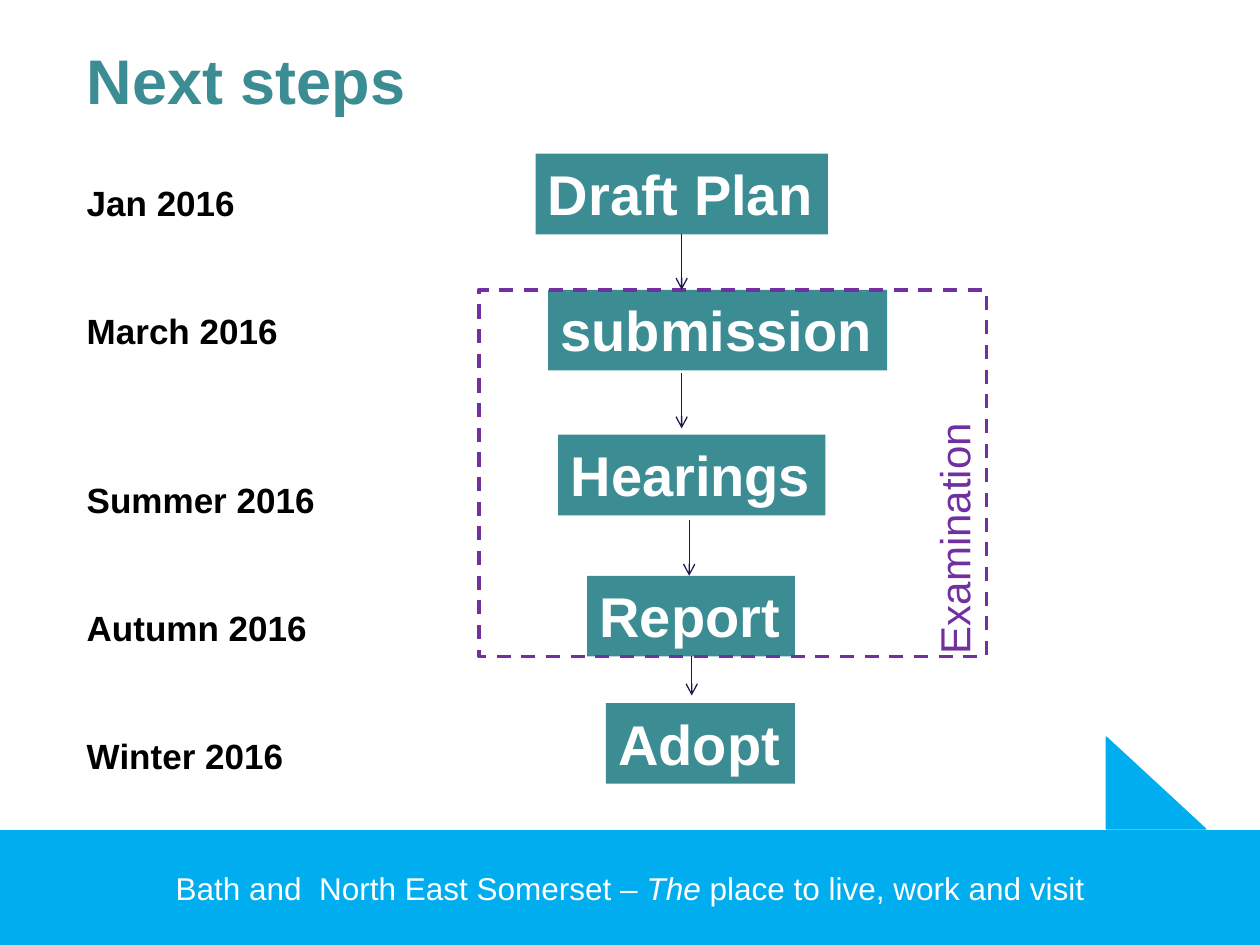
from lxml import etree
from pptx import Presentation
from pptx.dml.color import RGBColor
from pptx.enum.dml import MSO_LINE
from pptx.enum.shapes import MSO_CONNECTOR, MSO_SHAPE
from pptx.enum.text import MSO_ANCHOR, PP_ALIGN
from pptx.oxml.ns import qn
from pptx.util import Inches, Pt

RECT = MSO_SHAPE.RECTANGLE
TRIANGLE = MSO_SHAPE.RIGHT_TRIANGLE
STRAIGHT = MSO_CONNECTOR.STRAIGHT
DASH = MSO_LINE.DASH
LEFT, CENTER = PP_ALIGN.LEFT, PP_ALIGN.CENTER
TOP, MIDDLE = MSO_ANCHOR.TOP, MSO_ANCHOR.MIDDLE

TEAL, SKY, PURPLE, NAVY = "3C8C93", "00AEEF", "7030A0", "19194D"
WHITE, BLACK = "FFFFFF", "000000"

STEP_HEIGHT = 0.64
STEPS = [  # text, left, top, width
    ("Draft Plan", 4.25, 1.22, 2.32),
    ("submission", 4.35, 2.3, 2.69),
    ("Hearings", 4.43, 3.45, 2.12),
    ("Report", 4.66, 4.57, 1.65),
    ("Adopt", 4.81, 5.58, 1.5),
]
ARROWS = [  # x, top, bottom
    (5.41, 1.86, 2.3),
    (5.41, 2.96, 3.4),
    (5.47, 4.13, 4.57),
    (5.49, 5.21, 5.52),
]
DATES = [  # text, points of space before
    ("Jan 2016", 0),
    ("March 2016", 49),
    ("Summer 2016", 73),
    ("Autumn 2016", 49),
    ("Winter 2016", 49),
]


def rgb(color):
    return RGBColor.from_string(color)


def add_box(slide, kind, at, fill=None, line=None, width=0.75):
    sp = slide.shapes.add_shape(kind, *map(Inches, at))
    sp.shadow.inherit = False
    if fill:
        sp.fill.solid()
        sp.fill.fore_color.rgb = rgb(fill)
    else:
        sp.fill.background()
    if line:
        sp.line.color.rgb = rgb(line)
        sp.line.width = Pt(width)
    else:
        sp.line.fill.background()
    return sp


def style(p, size, color, bold=False, align=LEFT):
    p.alignment = align
    p.font.name = "Arial"
    p.font.size = Pt(size)
    p.font.bold = bold
    p.font.color.rgb = rgb(color)


def set_text(sp, text, size, color, bold=False, anchor=TOP):
    tf = sp.text_frame
    tf.word_wrap = False
    tf.vertical_anchor = anchor
    tf.text = text
    style(tf.paragraphs[0], size, color, bold)


def add_text(slide, at, text, size, color, bold=False, anchor=TOP):
    sp = slide.shapes.add_textbox(*map(Inches, at))
    set_text(sp, text, size, color, bold, anchor)
    return sp


def add_footer(slide):
    add_box(slide, TRIANGLE, (8.78, 5.85, 0.79, 0.73), SKY, SKY)
    sp = add_box(slide, RECT, (0, 6.59, 10, 0.91), SKY, SKY)
    tf = sp.text_frame
    tf.vertical_anchor = MIDDLE
    p = tf.paragraphs[0]
    for text, italic in [
        ("Bath and  North East Somerset – ", False),
        ("The", True),
        (" place to live, work and visit", False),
    ]:
        r = p.add_run()
        r.text = text
        r.font.italic = italic
    style(p, 18, WHITE, align=CENTER)


def add_dates(slide):
    sp = slide.shapes.add_textbox(*map(Inches, (0.59, 1.39, 2.03, 4.81)))
    tf = sp.text_frame
    tf.word_wrap = False
    for i, (text, gap) in enumerate(DATES):
        p = tf.add_paragraph() if i else tf.paragraphs[0]
        p.text = text
        p.space_before = Pt(gap)
        style(p, 20, BLACK, True)


def add_arrow(slide, x, top, bottom):
    cxn = slide.shapes.add_connector(
        STRAIGHT, Inches(x), Inches(top), Inches(x), Inches(bottom))
    cxn.line.color.rgb = rgb(NAVY)
    cxn.line.width = Pt(0.75)
    etree.SubElement(cxn.line._get_or_add_ln(), qn("a:tailEnd"), type="arrow")
    etree.SubElement(cxn._element.spPr, qn("a:effectLst"))


def add_examination(slide):
    frame = add_box(slide, RECT, (3.8, 2.3, 4.03, 2.91), None, PURPLE, 2)
    frame.line.dash_style = DASH
    label = add_text(slide, (6.54, 4.01, 2.06, 0.5), "Examination", 24, PURPLE)
    label.rotation = 270


def main():
    prs = Presentation()
    prs.slide_width, prs.slide_height = Inches(10), Inches(7.5)
    slide = prs.slides.add_slide(prs.slide_layouts[6])
    add_footer(slide)
    title = add_text(slide, (0.59, 0, 8.62, 1.26), "Next steps", 36, TEAL, True, MIDDLE)
    title.text_frame.word_wrap = True
    for text, left, top, width in STEPS:
        sp = add_box(slide, RECT, (left, top, width, STEP_HEIGHT), TEAL)
        set_text(sp, text, 32, WHITE, True)
    add_dates(slide)
    add_examination(slide)
    for arrow in ARROWS:
        add_arrow(slide, *arrow)
    prs.save("out.pptx")


if __name__ == "__main__":
    main()
